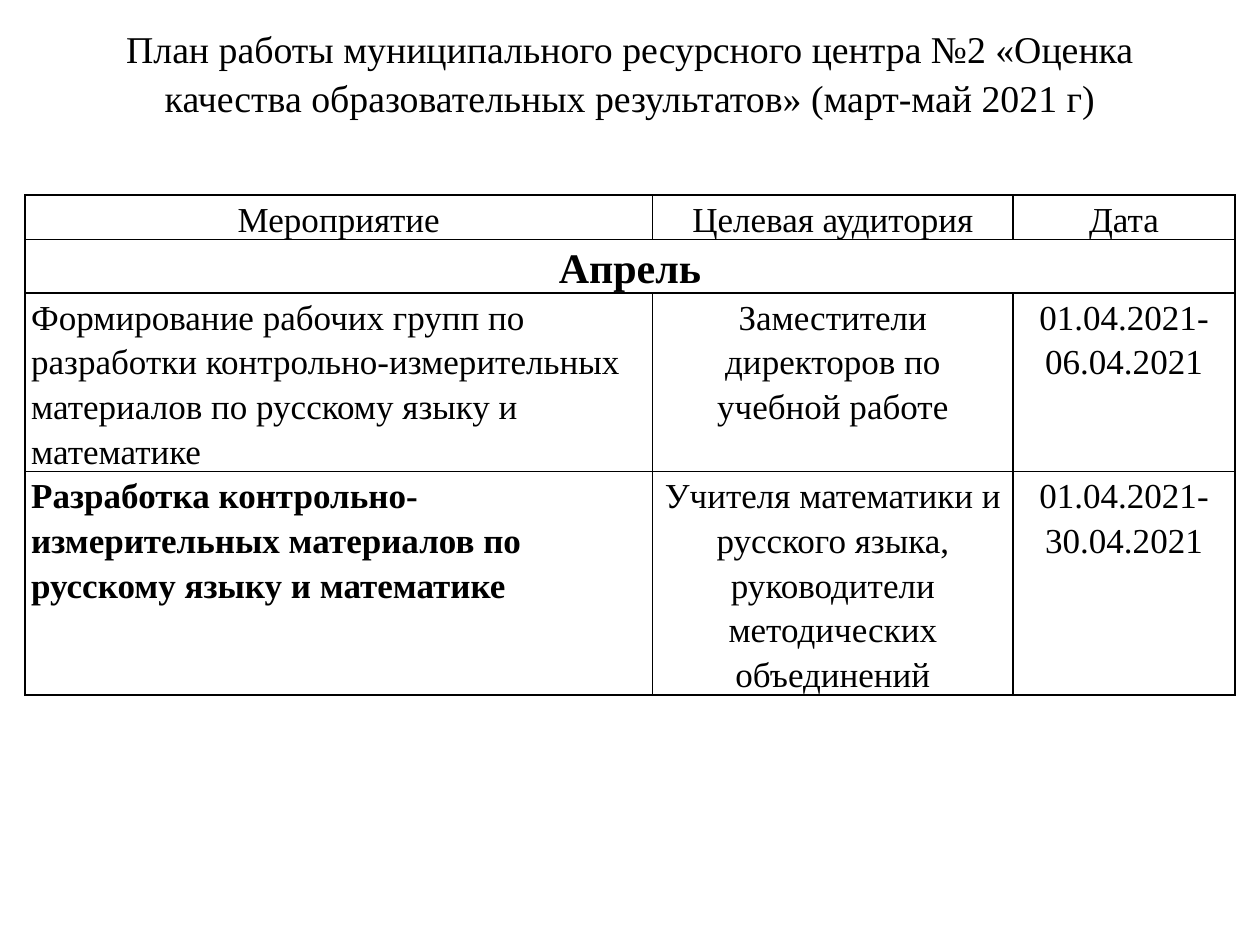
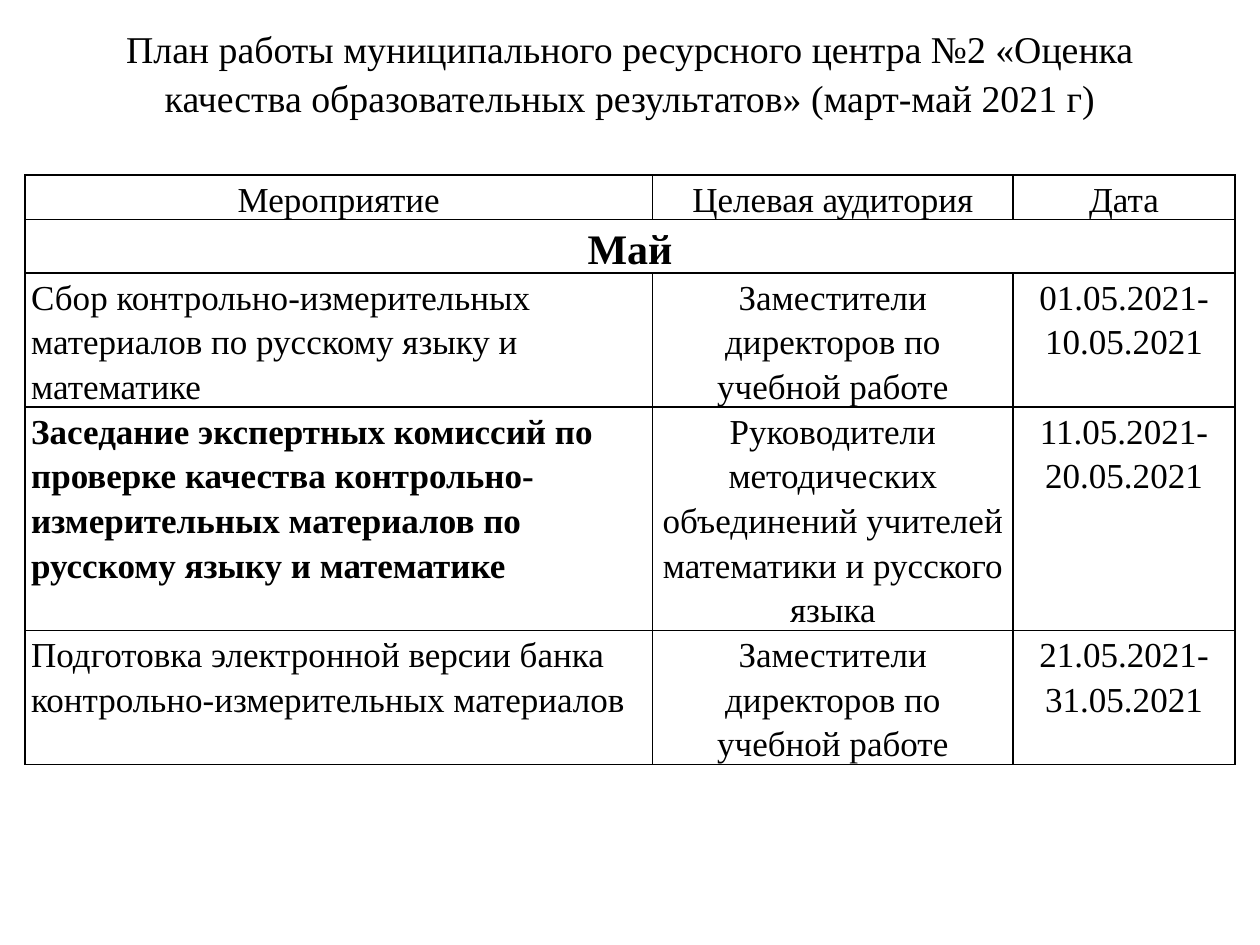
from lxml import etree
from pptx import Presentation
from pptx.dml.color import RGBColor
from pptx.enum.text import MSO_ANCHOR, MSO_AUTO_SIZE, PP_ALIGN
from pptx.oxml import parse_xml
from pptx.oxml.ns import nsdecls
from pptx.util import Pt

LEFT, CENTER = PP_ALIGN.LEFT, PP_ALIGN.CENTER
TOP, MIDDLE = MSO_ANCHOR.TOP, MSO_ANCHOR.MIDDLE
NO_AUTOFIT = MSO_AUTO_SIZE.NONE
TITLE_ONLY = 5

FONT = "Times New Roman"
BLACK = "000000"
TITLE = ("План работы муниципального ресурсного центра №2 «Оценка качества "
         "образовательных результатов» (март-май 2021 г)")
HEADERS = ("Мероприятие", "Целевая аудитория", "Дата")
COLUMN_WIDTHS = (358.8, 205.9, 126.9)
TABLE_LEFT = 14.2
TEXT_SIZE, MONTH_SIZE, TITLE_SIZE = 20, 24, 21.6
LINE_HEIGHT, MONTH_HEIGHT = 25.5, 30.5
DEPUTIES = "Заместители директоров по учебной работе"

MONTHS = (
    ("Апрель", 111.4, (
        (4, False, "Формирование рабочих групп по разработки контрольно-измерительных "
         "материалов по русскому языку и математике", DEPUTIES, "01.04.2021-06.04.2021"),
        (5, True, "Разработка контрольно-измерительных материалов по русскому языку и математике",
         "Учителя математики и русского языка, руководители методических объединений",
         "01.04.2021-30.04.2021"),
    )),
    ("Май", 100, (
        (3, False, "Сбор контрольно-измерительных материалов по русскому языку и математике",
         DEPUTIES, "01.05.2021-10.05.2021"),
        (5, True, "Заседание экспертных комиссий по проверке качества "
         "контрольно-измерительных материалов по русскому языку и математике",
         "Руководители методических объединений учителей математики и русского языка",
         "11.05.2021-20.05.2021"),
        (3, False, "Подготовка электронной версии банка контрольно-измерительных материалов",
         DEPUTIES, "21.05.2021-31.05.2021"),
    )),
)


def color(value):
    return RGBColor.from_string(value)


class PlanDeck:
    """Builds work plan slides in one shared style."""

    def __init__(self):
        self.presentation = Presentation()
        self.presentation.slide_width = Pt(720)
        self.presentation.slide_height = Pt(540)
        self.slide = None

    def add_slide(self):
        layout = self.presentation.slide_layouts[TITLE_ONLY]
        self.slide = self.presentation.slides.add_slide(layout)

    def format_text(self, text_frame, size, bold=False, alignment=CENTER, spacing=1.15):
        for paragraph in text_frame.paragraphs:
            paragraph.alignment = alignment
            paragraph.line_spacing = spacing
            for run in paragraph.runs:
                run.font.name = FONT
                run.font.size = Pt(size)
                run.font.bold = bold
                run.font.color.rgb = color(BLACK)

    def title(self, text):
        shape = self.slide.shapes.title
        shape.left, shape.top, shape.width, shape.height = Pt(54), Pt(9.4), Pt(612), Pt(62.6)
        text_frame = shape.text_frame
        text_frame.text = text
        text_frame.word_wrap = True
        text_frame.auto_size = NO_AUTOFIT
        text_frame.vertical_anchor = MIDDLE
        self.format_text(text_frame, TITLE_SIZE, spacing=1.08)

    def border(self, cell):
        properties = cell._tc.get_or_add_tcPr()
        for side in ("lnL", "lnR", "lnT", "lnB"):
            line = parse_xml(f'<a:{side} {nsdecls("a")} w="{Pt(1)}"/>')
            fill = etree.SubElement(line, line.tag.replace(side, "solidFill"))
            etree.SubElement(fill, line.tag.replace(side, "srgbClr"), val=BLACK)
            properties.append(line)

    def cell(self, cell, text, size=TEXT_SIZE, bold=False, alignment=CENTER):
        cell.text_frame.text = text
        cell.vertical_anchor = TOP
        self.format_text(cell.text_frame, size, bold, alignment)

    def table(self, month, top, events):
        heights = [LINE_HEIGHT, MONTH_HEIGHT] + [LINE_HEIGHT * event[0] for event in events]
        frame = self.slide.shapes.add_table(
            len(heights), len(HEADERS), Pt(TABLE_LEFT), Pt(top),
            Pt(sum(COLUMN_WIDTHS)), Pt(sum(heights)))
        table = frame.table
        table.first_row = table.horz_banding = False
        for column, width in zip(table.columns, COLUMN_WIDTHS):
            column.width = Pt(width)
        for row, height in zip(table.rows, heights):
            row.height = Pt(height)
        for cell in table.iter_cells():
            cell.margin_left = cell.margin_right = Pt(3.6)
            cell.margin_top = cell.margin_bottom = Pt(0)
            self.border(cell)
            cell.fill.background()
        for index, header in enumerate(HEADERS):
            self.cell(table.cell(0, index), header)
        table.cell(1, 0).merge(table.cell(1, len(HEADERS) - 1))
        self.cell(table.cell(1, 0), month, MONTH_SIZE, bold=True)
        for index, (_, bold, event, audience, dates) in enumerate(events, start=2):
            self.cell(table.cell(index, 0), event, bold=bold, alignment=LEFT)
            self.cell(table.cell(index, 1), audience)
            self.cell(table.cell(index, 2), dates)


def main():
    deck = PlanDeck()
    for month, top, events in MONTHS:
        deck.add_slide()
        deck.title(TITLE)
        deck.table(month, top, events)
    deck.presentation.save("out.pptx")


if __name__ == "__main__":
    main()
